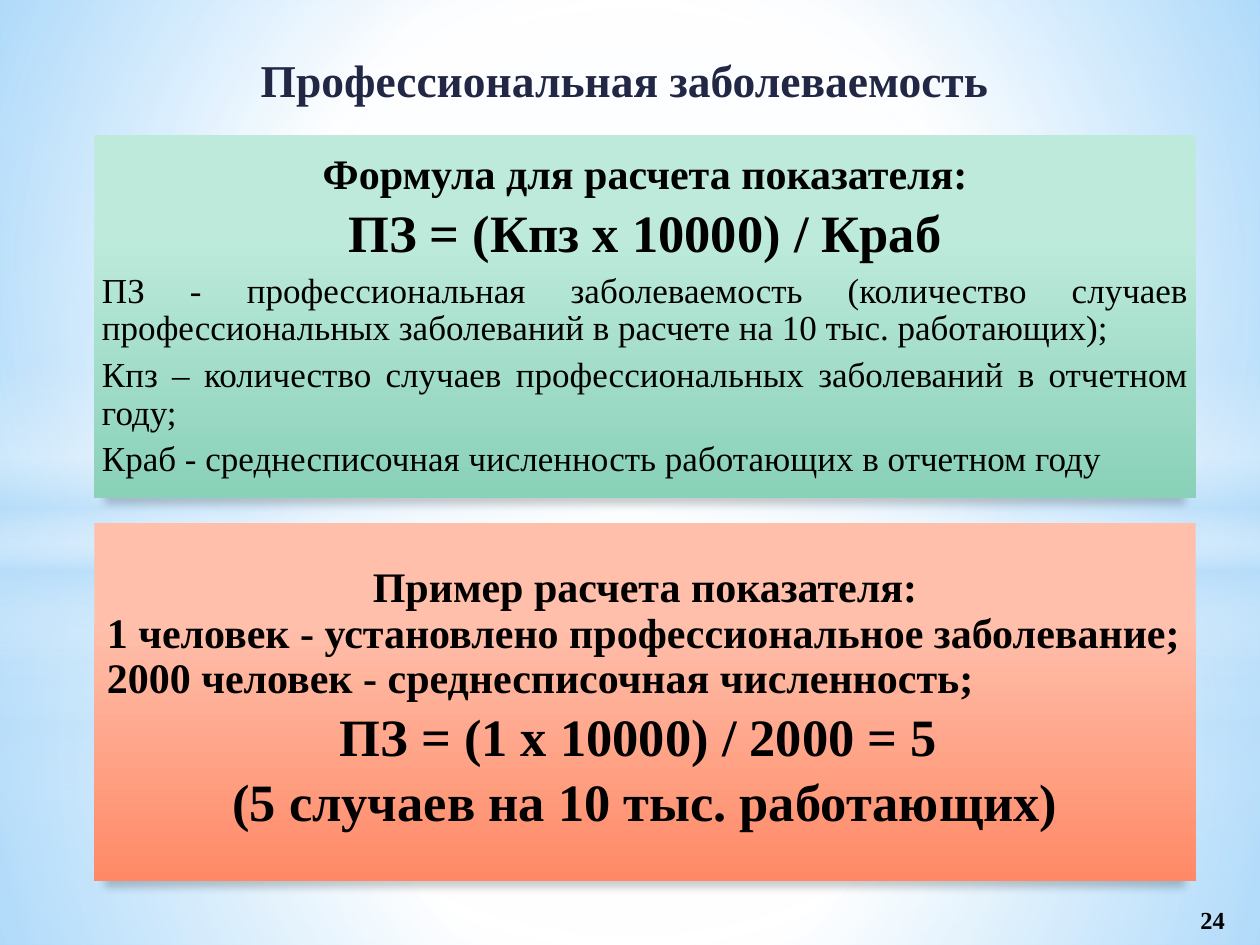
import pptx
import pptx.util
import pptx.dml.color
import pptx.enum.shapes
import pptx.enum.text
import pptx.oxml

COLORS = {
    "white": "FFFFFF", "haze": "B4DCFA", "sky": "99D4FE", "azure": "54BDFF",
    "navy": "212745", "black": "000000",
    "mint": "BDEADB", "green": "89D1B8", "peach": "FFBFAB", "coral": "FF8966",
}
FONT = "Times New Roman"
NAMESPACE = 'xmlns:a="http://schemas.openxmlformats.org/drawingml/2006/main"'
ALIGN = pptx.enum.text.PP_ALIGN
ANCHOR = pptx.enum.text.MSO_ANCHOR
SHAPES = pptx.enum.shapes.MSO_SHAPE

presentation = pptx.Presentation()
WIDTH = presentation.slide_width = pptx.util.Inches(10)
HEIGHT = presentation.slide_height = pptx.util.Inches(7.5)
slide = presentation.slides.add_slide(presentation.slide_layouts[6])


def set_gradient(solid_fill, stops, circle=False):
    """Replace a solid fill by (position, color, opacity) stops, all in percent."""
    marks = "".join(
        f'<a:gs pos="{position * 1000}"><a:srgbClr val="{COLORS[color]}">'
        f'<a:alpha val="{opacity * 1000}"/></a:srgbClr></a:gs>'
        for position, color, opacity in stops)
    direction = '<a:lin ang="5400000" scaled="0"/>'
    if circle:
        direction = ('<a:path path="circle"><a:fillToRect l="50000" t="50000" '
                     'r="50000" b="50000"/></a:path>')
    gradient = pptx.oxml.parse_xml(
        f'<a:gradFill {NAMESPACE} rotWithShape="1"><a:gsLst>{marks}</a:gsLst>{direction}</a:gradFill>')
    solid_fill.getparent().replace(solid_fill, gradient)


def add_text(box, lines, color="black", anchor=ANCHOR.MIDDLE, margins=(0.1, 0.05), spacing=None):
    """Each line is (text, size, bold, alignment, space before)."""
    left, top, width, height = (pptx.util.Inches(length) for length in box)
    frame = slide.shapes.add_textbox(left, top, width, height).text_frame
    frame.word_wrap = True
    frame.vertical_anchor = anchor
    frame.margin_left = frame.margin_right = pptx.util.Inches(margins[0])
    frame.margin_top = frame.margin_bottom = pptx.util.Inches(margins[1])
    for index, (text, size, bold, alignment, before) in enumerate(lines):
        paragraph = frame.paragraphs[0] if index == 0 else frame.add_paragraph()
        paragraph.alignment = alignment
        paragraph.line_spacing = spacing
        paragraph.space_before = pptx.util.Pt(before)
        run = paragraph.add_run()
        run.text = text
        run.font.name = FONT
        run.font.size = pptx.util.Pt(size)
        run.font.bold = bold
        run.font.color.rgb = pptx.dml.color.RGBColor.from_string(COLORS[color])


# Background
slide.background.fill.solid()
set_gradient(slide.element.xpath("./p:cSld/p:bg/p:bgPr/a:solidFill")[0],
             [(0, "sky", 100), (60, "white", 100), (100, "azure", 100)], circle=True)

# Two layers of haze: horizon, band top, stop of the glow, added opacity
layers = [(5.58, 4.12, 56, 0), (4.23, 2.9, 54, 1)]
backdrop = []
for horizon, band, glow, extra in layers:
    backdrop += [
        (SHAPES.RECTANGLE, horizon, 7.5 - horizon, True,
         [(0, "white", 91 + extra), (37, "white", 76 + extra), (100, "haze", 79 + extra)]),
        (SHAPES.RECTANGLE, 0, horizon, True,
         [(0, "white", 89 + extra), (48, "white", 62 + extra), (100, "haze", 79 + extra)]),
        (SHAPES.RECTANGLE, band, 2.5, False,
         [(0, "white", 0), (29, "white", 30), (45, "haze", 40),
          (55, "white", 26), (65, "haze", 60), (100, "white", 0)]),
        (SHAPES.OVAL, 1.75, 5.58, True,
         [(0, "white", 100), (glow, "white", 0), (100, "white", 0)]),
    ]
for kind, top, height, circle, stops in backdrop:
    shape = slide.shapes.add_shape(
        kind, 0, pptx.util.Inches(top), WIDTH, pptx.util.Inches(height))
    shape.shadow.inherit = False
    shape.line.fill.background()
    shape.fill.solid()
    set_gradient(shape.element.spPr.find(pptx.oxml.ns.qn("a:solidFill")), stops, circle)

# Formula and example panels
PANEL_LEFT, PANEL_WIDTH = 0.75, 8.74
for top, height, light, dark in [(1.07, 2.88, "mint", "green"), (4.15, 2.84, "peach", "coral")]:
    panel = slide.shapes.add_shape(
        SHAPES.RECTANGLE, *(pptx.util.Inches(length) for length in (PANEL_LEFT, top, PANEL_WIDTH, height)))
    panel.line.fill.background()
    panel.fill.solid()
    panel.shadow.inherit = False
    properties = panel.element.spPr
    set_gradient(properties.find(pptx.oxml.ns.qn("a:solidFill")),
                 [(0, light, 100), (28, light, 100), (100, dark, 100)])
    properties.find(pptx.oxml.ns.qn("a:effectLst")).append(pptx.oxml.parse_xml(
        f'<a:outerShdw {NAMESPACE} blurRad="63500" dist="50800" dir="5400000" '
        f'sx="98000" sy="98000" rotWithShape="0"><a:srgbClr val="{COLORS["black"]}">'
        '<a:alpha val="20000"/></a:srgbClr></a:outerShdw>'))

# Title
add_text((1.38, 0.36, 7.16, 0.55),
         [("Профессиональная заболеваемость", 26, True, ALIGN.CENTER, 0)],
         color="navy", anchor=ANCHOR.TOP)

# Formula
add_text((PANEL_LEFT, 1.07, PANEL_WIDTH, 2.88), [
    ("Формула для расчета показателя:", 24, True, ALIGN.CENTER, 0),
    ("ПЗ = (Кпз x 10000) / Краб", 30, True, ALIGN.CENTER, 4.9),
    ("ПЗ - профессиональная заболеваемость (количество случаев профессиональных "
     "заболеваний в расчете на 10 тыс. работающих);", 20, False, ALIGN.JUSTIFY, 4.9),
    ("Кпз – количество случаев профессиональных заболеваний в отчетном году;",
     20, False, ALIGN.JUSTIFY, 4.9),
    ("Краб - среднесписочная численность работающих в отчетном году",
     20, False, ALIGN.JUSTIFY, 4.9),
], margins=(0.06, 0.06), spacing=0.9)

# Worked example
add_text((PANEL_LEFT, 3.85, PANEL_WIDTH, 3.41), [
    ("Пример расчета показателя:", 24, True, ALIGN.CENTER, 0),
    ("1 человек - установлено профессиональное заболевание;", 24, True, ALIGN.LEFT, 0),
    ("2000 человек - среднесписочная численность;", 24, True, ALIGN.LEFT, 0),
    ("ПЗ = (1 x 10000) / 2000 = 5 ", 30, True, ALIGN.CENTER, 4.9),
    ("(5 случаев на 10 тыс. работающих)", 30, True, ALIGN.CENTER, 4.9),
], margins=(0.1, 0.1), spacing=0.9)

# Slide number
add_text((9.25, 7.1, 0.75, 0.4), [("24", 14, True, ALIGN.CENTER, 0)])

presentation.save("out.pptx")
